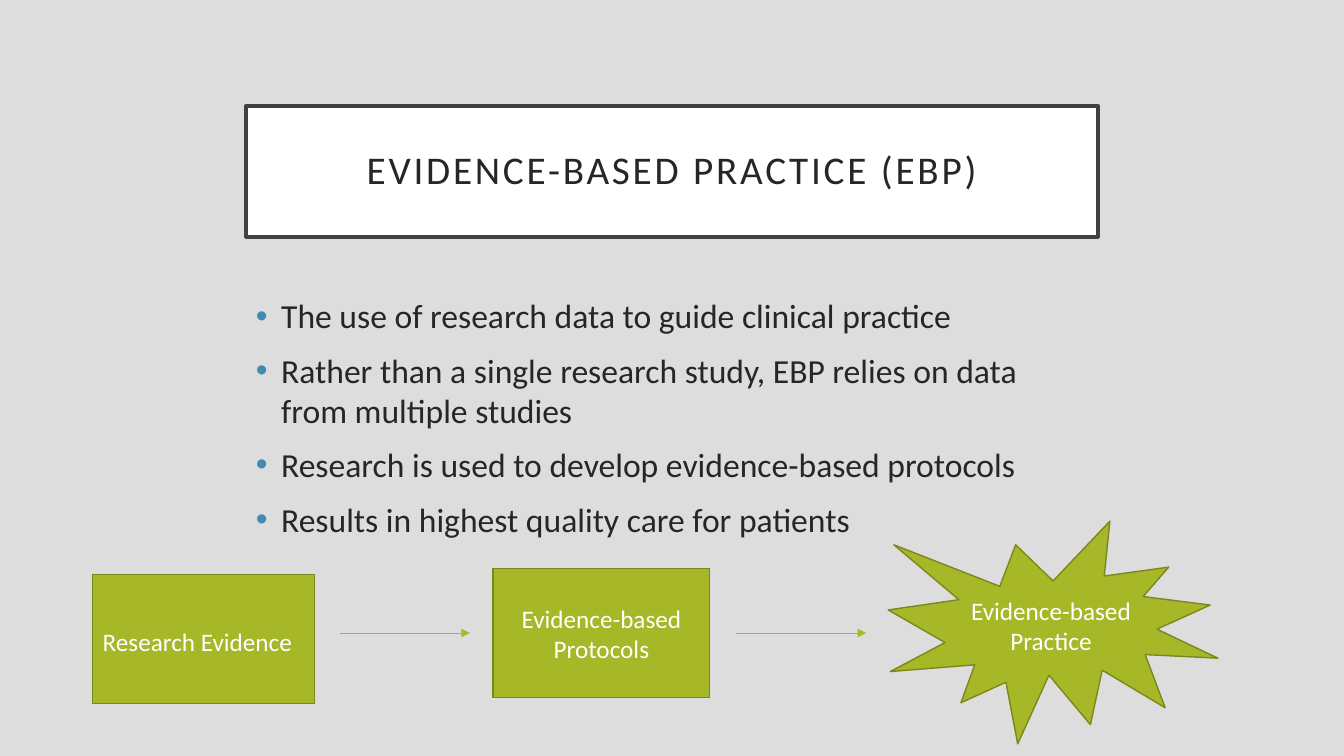
from dataclasses import dataclass

import pptx
import pptx.dml.color
import pptx.enum.dml
import pptx.enum.shapes
import pptx.enum.text
import pptx.oxml
import pptx.oxml.ns
import pptx.shapes.autoshape
import pptx.slide
import pptx.text.text
import pptx.util

Inches = pptx.util.Inches
Pt = pptx.util.Pt
RGBColor = pptx.dml.color.RGBColor
ShapeType = pptx.enum.shapes.MSO_SHAPE
Alignment = pptx.enum.text.PP_ALIGN
Anchor = pptx.enum.text.MSO_ANCHOR

BACKGROUND = RGBColor(0xDD, 0xDD, 0xDD)
WHITE = RGBColor(0xFF, 0xFF, 0xFF)
INK = RGBColor(0x26, 0x26, 0x26)
TITLE_BORDER = RGBColor(0x40, 0x40, 0x40)
GREEN = RGBColor(0xA6, 0xB7, 0x27)
GREEN_BORDER = RGBColor(0x7B, 0x87, 0x1D)
BULLET_BLUE = RGBColor(0x41, 0x8A, 0xB3)
FONT = "Calibri"
CONTENT_LEFT, CONTENT_WIDTH = 2.44, 8.45
ARROW_Y, ARROW_LENGTH = 6.28, 1.29


@dataclass(frozen=True)
class Stage:
    kind: ShapeType
    left: float
    top: float
    width: float
    height: float
    text: str = ""


STAGES = [
    Stage(ShapeType.RECTANGLE, 0.92, 5.7, 2.2, 1.28),
    Stage(ShapeType.RECTANGLE, 4.89, 5.64, 2.15, 1.28, "Evidence-based Protocols"),
    Stage(ShapeType.EXPLOSION1, 8.81, 5.17, 3.27, 2.21, "Evidence-based Practice"),
]
ARROW_STARTS = [3.37, 7.3]
BULLETS = [
    "The use of research data to guide clinical practice",
    "Rather than a single research study, EBP relies on data from multiple studies",
    "Research is used to develop evidence-based protocols",
    "Results in highest quality care for patients",
]


def format_runs(paragraph: pptx.text.text._Paragraph, size: float, color: RGBColor) -> None:
    for run in paragraph.runs:
        run.font.name = FONT
        run.font.size = Pt(size)
        run.font.color.rgb = color


def paint(shape: pptx.shapes.autoshape.Shape, fill: RGBColor, border: RGBColor, width: float) -> None:
    shape.fill.solid()
    shape.fill.fore_color.rgb = fill
    shape.line.color.rgb = border
    shape.line.width = Pt(width)


def add_text_box(slide: pptx.slide.Slide, left: float, top: float, width: float,
                 height: float, text: str, size: float, color: RGBColor) -> pptx.text.text.TextFrame:
    box = slide.shapes.add_textbox(Inches(left), Inches(top), Inches(width), Inches(height))
    text_frame = box.text_frame
    text_frame.word_wrap = True
    text_frame.text = text
    for paragraph in text_frame.paragraphs:
        format_runs(paragraph, size, color)
    return text_frame


def format_title(slide: pptx.slide.Slide) -> None:
    title = slide.shapes.title
    title.left, title.top = Inches(CONTENT_LEFT), Inches(1.05)
    title.width, title.height = Inches(CONTENT_WIDTH), Inches(1.3)
    paint(title, WHITE, TITLE_BORDER, 2.5)
    text_frame = title.text_frame
    text_frame.text = "EVIDENCE-BASED PRACTICE (EBP)"
    text_frame.word_wrap = True
    text_frame.auto_size = pptx.enum.text.MSO_AUTO_SIZE.NONE
    text_frame.vertical_anchor = Anchor.MIDDLE
    text_frame.margin_left = text_frame.margin_right = Inches(0.2)
    text_frame.margin_top = text_frame.margin_bottom = Inches(0.2)
    paragraph = text_frame.paragraphs[0]
    paragraph.alignment = Alignment.CENTER
    paragraph.line_spacing = 0.9
    format_runs(paragraph, 28, INK)
    paragraph.runs[0].font._element.set("spc", "200")


def add_bullet(paragraph: pptx.text.text._Paragraph) -> None:
    paragraph.space_before = Pt(10)
    properties = paragraph._p.get_or_add_pPr()
    properties.set("marL", str(Inches(0.25)))
    properties.set("indent", str(Inches(-0.25)))
    namespace = pptx.oxml.ns.nsdecls("a")
    for markup in (
        f'<a:buClr {namespace}><a:srgbClr val="{BULLET_BLUE}"/></a:buClr>',
        f'<a:buFont {namespace} typeface="Arial"/>',
        f'<a:buChar {namespace} char="•"/>',
    ):
        properties.append(pptx.oxml.parse_xml(markup))


def add_stage(slide: pptx.slide.Slide, stage: Stage) -> None:
    shape = slide.shapes.add_shape(stage.kind, Inches(stage.left), Inches(stage.top),
                                   Inches(stage.width), Inches(stage.height))
    shape.shadow.inherit = False
    paint(shape, GREEN, GREEN_BORDER, 1)
    if stage.text:
        text_frame = shape.text_frame
        text_frame.text = stage.text
        text_frame.word_wrap = True
        text_frame.vertical_anchor = Anchor.MIDDLE
        paragraph = text_frame.paragraphs[0]
        paragraph.alignment = Alignment.CENTER
        format_runs(paragraph, 18, WHITE)


def add_arrow(slide: pptx.slide.Slide, start: float) -> None:
    arrow = slide.shapes.add_connector(
        pptx.enum.shapes.MSO_CONNECTOR.STRAIGHT, Inches(start), Inches(ARROW_Y),
        Inches(start + ARROW_LENGTH), Inches(ARROW_Y))
    arrow.line.color.rgb = GREEN
    arrow.line.width = Pt(0.5)
    namespace = pptx.oxml.ns.nsdecls("a")
    arrow.line._get_or_add_ln().append(
        pptx.oxml.parse_xml(f'<a:tailEnd {namespace} type="triangle"/>'))
    arrow._element.spPr.append(pptx.oxml.parse_xml(f"<a:effectLst {namespace}/>"))


def main() -> None:
    presentation = pptx.Presentation()
    presentation.slide_width = Inches(13.33)
    presentation.slide_height = Inches(7.5)
    slide = presentation.slides.add_slide(presentation.slide_layouts.get_by_name("Title Only"))
    slide.background.fill.solid()
    slide.background.fill.fore_color.rgb = BACKGROUND

    format_title(slide)
    body = add_text_box(slide, CONTENT_LEFT, 2.88, CONTENT_WIDTH, 3.39, "\n".join(BULLETS), 24, INK)
    for paragraph in body.paragraphs:
        add_bullet(paragraph)
    for stage in STAGES:
        add_stage(slide, stage)
    add_text_box(slide, 0.92, 6.16, 2.19, 0.4, "Research Evidence", 18, WHITE)
    for start in ARROW_STARTS:
        add_arrow(slide, start)
    presentation.save("out.pptx")


if __name__ == "__main__":
    main()
